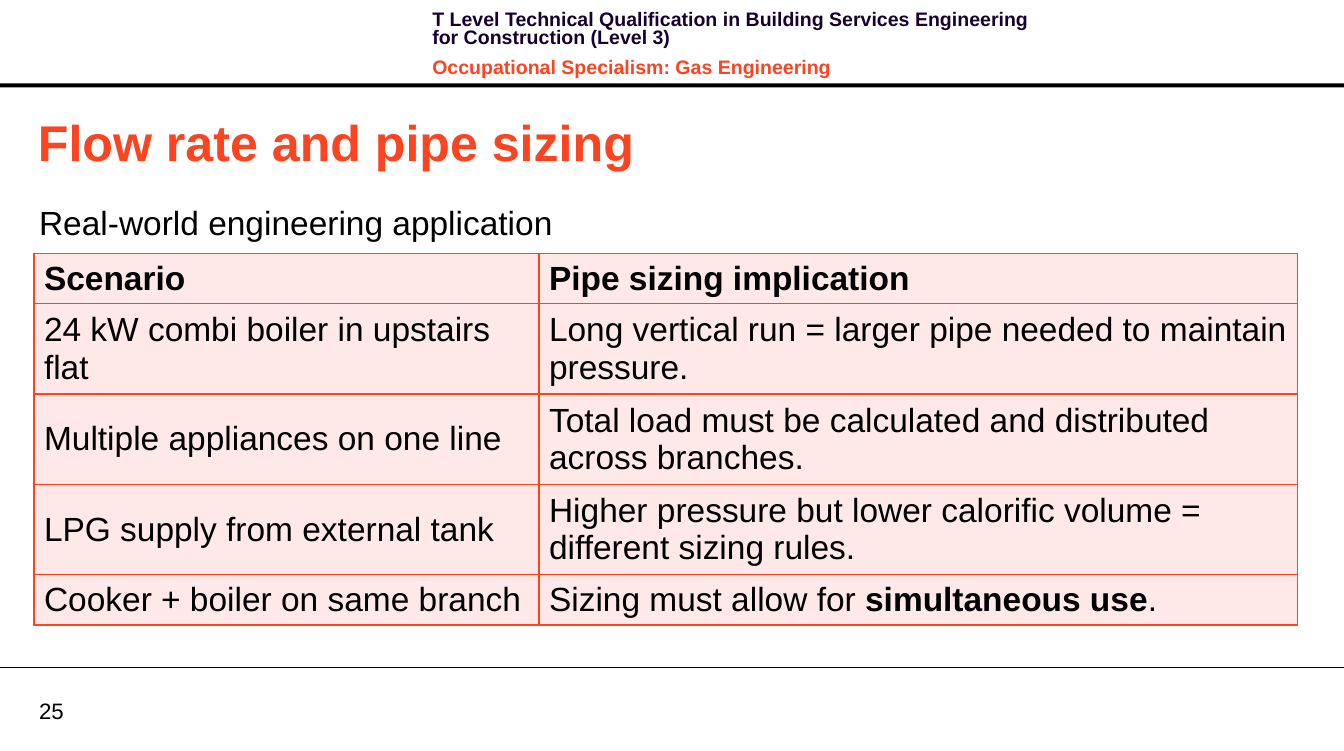
from lxml import etree
from pptx import Presentation
from pptx.dml.color import RGBColor
from pptx.enum.shapes import MSO_CONNECTOR, MSO_SHAPE
from pptx.enum.text import MSO_ANCHOR
from pptx.oxml.ns import qn
from pptx.util import Cm, Pt

LINE = MSO_CONNECTOR.STRAIGHT
RECT = MSO_SHAPE.RECTANGLE
TOP, MIDDLE = MSO_ANCHOR.TOP, MSO_ANCHOR.MIDDLE

FONT = "Arial"
COLORS = {"ink": "000000", "navy": "170130", "accent": "FC4421", "tint": "FEE9E8"}
WIDTH, HEIGHT = 34.01, 19.0

QUALIFICATION = ("T Level Technical Qualification in Building Services Engineering "
                 "for Construction (Level 3)")
SPECIALISM = "Occupational Specialism: Gas Engineering"
# Each cell is a list of (text, bold) runs
SCENARIOS = [
    ([("Scenario", True)], [("Pipe sizing implication", True)]),
    ([("24 kW combi boiler in upstairs flat", False)],
     [("Long vertical run = larger pipe needed to maintain pressure.", False)]),
    ([("Multiple appliances on one line", False)],
     [("Total load must be calculated and distributed across branches.", False)]),
    ([("LPG supply from external tank", False)],
     [("Higher pressure but lower calorific volume = different sizing rules.", False)]),
    ([("Cooker + boiler on same branch", False)],
     [("Sizing must allow for ", False), ("simultaneous use", True), (".", False)]),
]
COL_WIDTHS = [12.78, 19.2]
ROW_HEIGHTS = [1.2, 2.14, 2.14, 2.14, 1.2]


def rgb(name):
    return RGBColor.from_string(COLORS[name])


def style_run(r, size, color="ink", bold=False):
    r.font.name = FONT
    r.font.size = Pt(size)
    r.font.bold = bold
    r.font.color.rgb = rgb(color)


def add_text(slide, box, lines, size, bold=False, anchor=TOP, inset=(0.25, 0.13)):
    """Add a text box; lines is a list of (text, color)."""
    tf = slide.shapes.add_textbox(*map(Cm, box)).text_frame
    tf.word_wrap = True
    tf.vertical_anchor = anchor
    tf.margin_left = tf.margin_right = Cm(inset[0])
    tf.margin_top = tf.margin_bottom = Cm(inset[1])
    for i, (text, color) in enumerate(lines):
        p = tf.add_paragraph() if i else tf.paragraphs[0]
        p.text = text
        style_run(p.runs[0], size, color, bold)
    return tf


def add_header(slide, box):
    x, y, w, h = box
    # Course names
    tf = add_text(slide, (x + 10.69, y + 0.18, 16.18, 1.63),
                  [(QUALIFICATION, "navy"), (SPECIALISM, "accent")], 14, bold=True)
    for i, p in enumerate(tf.paragraphs):
        p.line_spacing = Pt(13.1)
        p.space_before = Pt(4 if i else 0)
        p.space_after = Pt(4)
    # Thick rule along the bottom
    sp = slide.shapes.add_shape(RECT, Cm(x), Cm(y + h - 0.1), Cm(w), Cm(0.1))
    sp.shadow.inherit = False
    sp.fill.solid()
    sp.fill.fore_color.rgb = rgb("ink")
    sp.line.fill.background()


def add_footer(slide, box, number):
    x, y, w, h = box
    rule = slide.shapes.add_connector(LINE, Cm(x), Cm(y), Cm(x + w), Cm(y))
    rule.line.color.rgb = rgb("ink")
    rule.line.width = Pt(0.75)
    etree.SubElement(rule._element.spPr, qn("a:effectLst"))
    add_text(slide, (x + 0.99, y + 0.74, 1.63, 0.69), [(number, "ink")], 16,
             anchor=MIDDLE, inset=(0, 0))


def set_borders(cell, color, width):
    tcPr = cell._tc.get_or_add_tcPr()
    for i, side in enumerate(("a:lnL", "a:lnR", "a:lnT", "a:lnB")):
        ln = etree.Element(qn(side), w=str(Pt(width)))
        fill = etree.SubElement(ln, qn("a:solidFill"))
        etree.SubElement(fill, qn("a:srgbClr"), val=COLORS[color])
        tcPr.insert(i, ln)


def add_scenario_table(slide, box):
    frame = slide.shapes.add_table(len(SCENARIOS), len(COL_WIDTHS), *map(Cm, box))
    table = frame.table
    table.first_row = table.horz_banding = False
    for col, width in zip(table.columns, COL_WIDTHS):
        col.width = Cm(width)
    for row, height, contents in zip(table.rows, ROW_HEIGHTS, SCENARIOS):
        row.height = Cm(height)
        for cell, runs in zip(row.cells, contents):
            cell.vertical_anchor = MIDDLE
            cell.fill.solid()
            cell.fill.fore_color.rgb = rgb("tint")
            set_borders(cell, "accent", 1)
            p = cell.text_frame.paragraphs[0]
            for text, bold in runs:
                r = p.add_run()
                r.text = text
                style_run(r, 24, bold=bold)


def add_content(slide, box):
    x, y, w, h = box
    # Title and lead-in
    add_text(slide, (x + 0.71, y + 0.46, 32.31, 1.8),
             [("Flow rate and pipe sizing", "accent")], 36, bold=True, anchor=MIDDLE)
    tf = add_text(slide, (x + 0.99, y + 2.79, 30.78, 11.51),
                  [("Real-world engineering application", "ink")], 24, inset=(0, 0))
    tf.paragraphs[0].line_spacing = 1.1
    tf.paragraphs[0].space_after = Pt(12)
    # Scenarios
    add_scenario_table(slide, (x + 0.86, y + 4.2, sum(COL_WIDTHS), sum(ROW_HEIGHTS)))


def main():
    prs = Presentation()
    prs.slide_width, prs.slide_height = Cm(WIDTH), Cm(HEIGHT)
    slide = prs.slides.add_slide(prs.slide_layouts[6])
    header_h, footer_y = 2.21, 16.89
    add_header(slide, (0, 0, WIDTH, header_h))
    add_footer(slide, (0, footer_y, WIDTH, HEIGHT - footer_y), "25")
    add_content(slide, (0, header_h, WIDTH, footer_y - header_h))
    prs.save("out.pptx")


if __name__ == "__main__":
    main()
